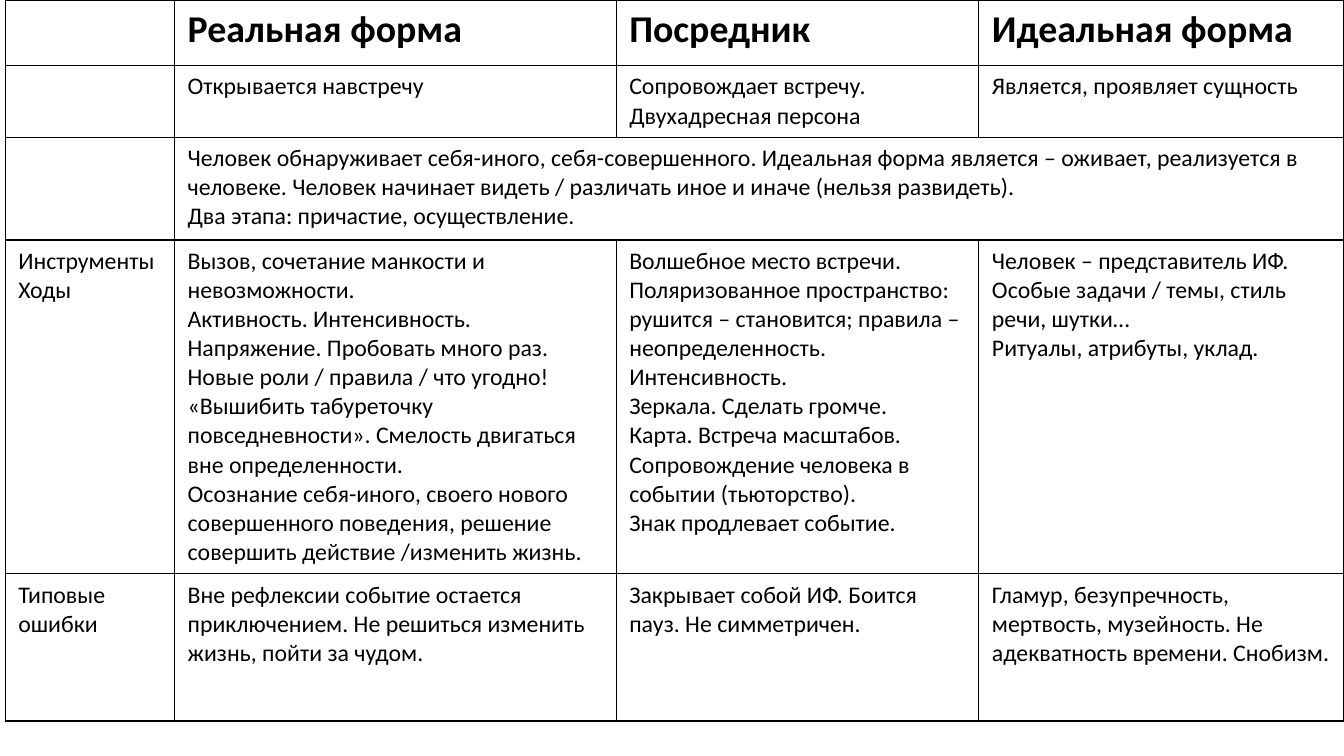
from dataclasses import dataclass

from lxml import etree
from pptx import Presentation
from pptx import util as u
from pptx.dml.color import RGBColor
from pptx.oxml import ns
from pptx.table import Table, _Cell

COLORS = {"ink": "000000", "line": "000000"}
FONT = "Calibri"
COLUMN_WIDTHS = (4.27, 11.13, 9.14, 9.19)


@dataclass(frozen=True)
class Row:
    height: float
    texts: tuple[str, ...]  # one per cell, paragraphs split by line breaks
    size: int = 17
    bold: bool = False
    merged: bool = False  # the second cell runs to the right edge


ROWS = (
    Row(1.65, ("", "Реальная форма", "Посредник", "Идеальная форма"), size=27, bold=True),
    Row(1.8, (
        "",
        "Открывается навстречу",
        "Сопровождает встречу. Двухадресная персона",
        "Является, проявляет сущность",
    )),
    Row(2.59, (
        "",
        "Человек обнаруживает себя-иного, себя-совершенного. Идеальная форма является – "
        "оживает, реализуется в человеке. Человек начинает видеть / различать иное и иначе "
        "(нельзя развидеть).\n"
        "Два этапа: причастие, осуществление.",
    ), merged=True),
    Row(8.41, (
        "Инструменты\nХоды",
        "Вызов, сочетание манкости и невозможности.\n"
        "Активность. Интенсивность. Напряжение. Пробовать много раз. "
        "Новые роли / правила / что угодно!\n"
        "«Вышибить табуреточку повседневности». Смелость двигаться вне определенности.\n"
        "Осознание себя-иного, своего нового совершенного поведения, решение "
        "совершить действие /изменить жизнь.",
        "Волшебное место встречи.\n"
        "Поляризованное пространство: рушится – становится; правила – неопределенность.\n"
        "Интенсивность.\n"
        "Зеркала. Сделать громче.\n"
        "Карта. Встреча масштабов.\n"
        "Сопровождение человека в событии (тьюторство).\n"
        "Знак продлевает событие.",
        "Человек – представитель ИФ.\n"
        "Особые задачи / темы, стиль речи, шутки…\n"
        "Ритуалы, атрибуты, уклад.",
    )),
    Row(3.71, (
        "Типовые ошибки",
        "Вне рефлексии событие остается приключением. Не решиться изменить жизнь, "
        "пойти за чудом.",
        "Закрывает собой ИФ. Боится пауз. Не симметричен.",
        "Гламур, безупречность, мертвость, музейность. Не адекватность времени. Снобизм.",
    )),
)


def style_cell(cell: _Cell) -> None:
    """Clear the fill, set the margins and draw all four borders."""
    cell.margin_left = cell.margin_right = u.Cm(0.33)
    cell.margin_top = cell.margin_bottom = u.Cm(0.17)
    cell.fill.background()
    properties = cell._tc.get_or_add_tcPr()
    for position, side in enumerate(("lnL", "lnR", "lnT", "lnB")):
        border = etree.Element(ns.qn(f"a:{side}"), w=str(u.Pt(1)))
        fill = etree.SubElement(border, ns.qn("a:solidFill"))
        etree.SubElement(fill, ns.qn("a:srgbClr"), val=COLORS["line"])
        properties.insert(position, border)


def write_cell(cell: _Cell, words: str, row: Row) -> None:
    cell.text = words
    for paragraph in cell.text_frame.paragraphs:
        font = paragraph.font
        font.name, font.size, font.bold = FONT, u.Pt(row.size), row.bold
        font.color.rgb = RGBColor.from_string(COLORS["ink"])


def fill_table(table: Table) -> None:
    for column, width in zip(table.columns, COLUMN_WIDTHS):
        column.width = u.Cm(width)
    for index, row in enumerate(ROWS):
        table.rows[index].height = u.Cm(row.height)
        for cell in table.rows[index].cells:
            style_cell(cell)
        if row.merged:
            table.cell(index, 1).merge(table.cell(index, len(COLUMN_WIDTHS) - 1))
        for position, words in enumerate(row.texts):
            write_cell(table.cell(index, position), words, row)


def main() -> None:
    deck = Presentation()
    deck.slide_width, deck.slide_height = u.Cm(33.87), u.Cm(19.05)
    slide = deck.slides.add_slide(deck.slide_layouts[6])
    forms = slide.shapes.add_table(
        len(ROWS), len(COLUMN_WIDTHS), u.Cm(0.13), u.Cm(0),
        u.Cm(sum(COLUMN_WIDTHS)), u.Cm(sum(row.height for row in ROWS)),
    ).table
    forms.first_row = forms.horz_banding = False
    fill_table(forms)
    deck.save("out.pptx")


if __name__ == "__main__":
    main()
